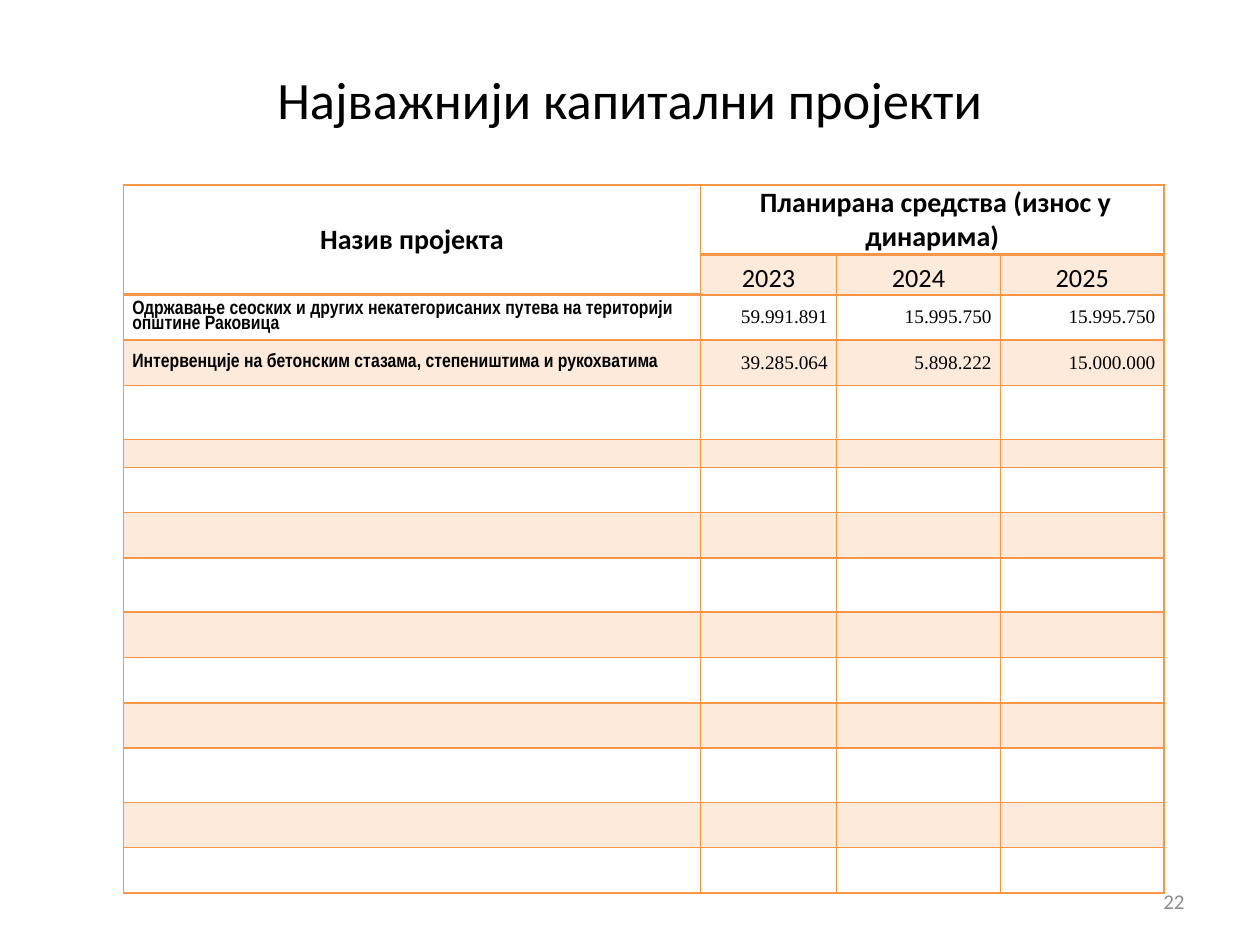
"""Build a slide with a table of the main capital projects."""
import pptx
import pptx.util
import pptx.oxml
import pptx.oxml.ns
import pptx.dml.color
import pptx.enum.text
import lxml.etree

Inches, Pt = pptx.util.Inches, pptx.util.Pt
Align, Anchor = pptx.enum.text.PP_ALIGN, pptx.enum.text.MSO_ANCHOR
qn = pptx.oxml.ns.qn
COLORS = {"text": "000000", "line": "F79646", "page": "8C8C8C"}


def style(frame, size, font, align, bold=False, color="text"):
    par = frame.paragraphs[0]
    par.alignment = align
    for run in par.runs:
        run.font.size = Pt(size)
        run.font.name = font
        run.font.bold = bold
        run.font.color.rgb = pptx.dml.color.RGBColor.from_string(COLORS[color])
    return par


def edge(props, side, width):
    line = lxml.etree.SubElement(props, qn("a:ln" + side), w=str(Pt(width)))
    fill = lxml.etree.SubElement(line, qn("a:solidFill"))
    lxml.etree.SubElement(fill, qn("a:srgbClr"), val=COLORS["line"])


prs = pptx.Presentation()
prs.slide_width, prs.slide_height = Inches(10), Inches(7.5)
slide = prs.slides.add_slide(prs.slide_layouts[6])

widths = [4.58, 1.08, 1.3, 1.3]
heights = [0.55, 0.32, 0.36, 0.36, 0.43, 0.22, 0.36, 0.36, 0.43,
           0.36, 0.36, 0.36, 0.43, 0.36, 0.36]
rows = [
    ["Назив пројекта", " Планирана средства (износ у динарима)", "", ""],
    ["", "2023", "2024", "2025"],
    ["Одржавање сеоских и других некатегорисаних путева на територији општине Раковица",
     "59.991.891", "15.995.750", "15.995.750"],
    ["Интервенције на бетонским стазама, степеништима и рукохватима",
     "39.285.064", "5.898.222", "15.000.000"],
]
rows += [[""] * len(widths)] * (len(heights) - len(rows))

table = slide.shapes.add_table(
    len(rows), len(widths), Inches(0.98), Inches(1.47),
    Inches(sum(widths)), Inches(sum(heights))).table
table.first_row = table.horz_banding = False
for col, width in zip(table.columns, widths):
    col.width = Inches(width)
for row, height in zip(table.rows, heights):
    row.height = Inches(height)
table.cell(0, 0).merge(table.cell(1, 0))
table.cell(0, 1).merge(table.cell(0, 3))

for r, texts in enumerate(rows):
    for c, text in enumerate(texts):
        cell = table.cell(r, c)
        cell.margin_left = cell.margin_right = Inches(0.07)
        cell.margin_top = cell.margin_bottom = 0
        cell.vertical_anchor = Anchor.BOTTOM if r < 2 and c else Anchor.MIDDLE
        props = cell._tc.get_or_add_tcPr()
        top, base = [2 if n == 1 or (n == 2 and c == 0) else 1 for n in (r, r + 1)]
        for side, width in zip("LRTB", (1, 1, top, base)):
            edge(props, side, width)
        if r % 2 and (r, c) != (1, 0):
            cell.fill.solid()
            cell.fill.fore_color.rgb = pptx.dml.color.RGBColor.from_string(COLORS["line"])
            tint = props.find(qn("a:solidFill")).find(qn("a:srgbClr"))
            lxml.etree.SubElement(tint, qn("a:alpha"), val="20000")
        else:
            cell.fill.background()
        frame = cell.text_frame
        if not text:
            lxml.etree.SubElement(frame.paragraphs[0]._p, qn("a:endParaRPr"), sz="1100")
            continue
        frame.text = text
        if r < 2:
            style(frame, 15 if r else 16, "Calibri", Align.CENTER, r == 0)
        elif c:
            style(frame, 11, "Times New Roman", Align.RIGHT)
        else:
            style(frame, 11, "Arial Narrow", Align.LEFT, True).line_spacing = 0.8

labels = [
    ("22", (7.17, 6.95, 2.33, 0.4), 12, Align.RIGHT, "page"),
    ("Најважнији капитални пројекти", (0.5, 0.3, 9, 0.96), 30, Align.CENTER, "text"),
]
for text, place, size, align, color in labels:
    frame = slide.shapes.add_textbox(*map(Inches, place)).text_frame
    frame.word_wrap = True
    frame.vertical_anchor = Anchor.MIDDLE
    frame.text = text
    style(frame, size, "Calibri", align, color=color)

prs.save("out.pptx")
